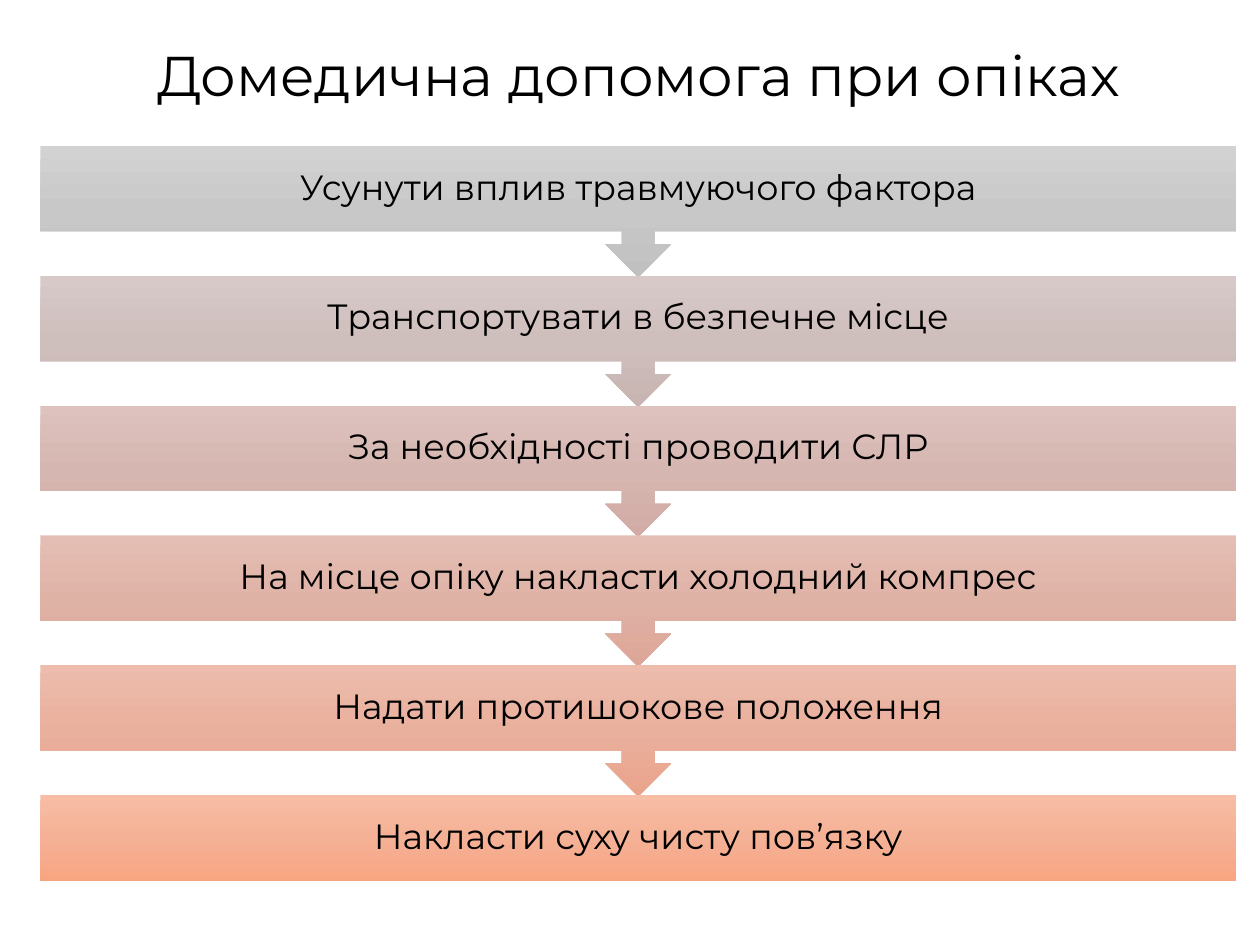
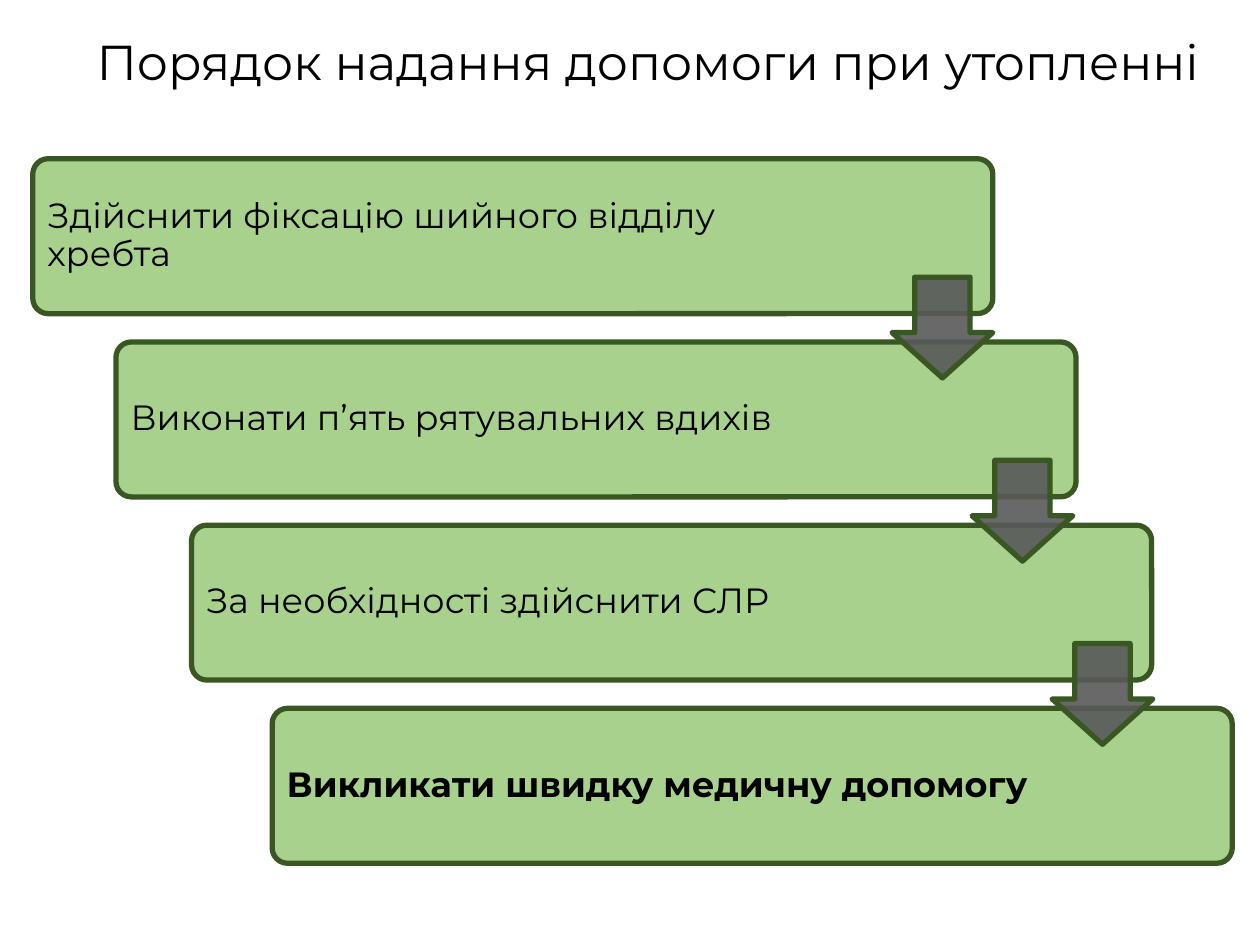
import copy
from dataclasses import dataclass

import pptx
import pptx.dml.color
import pptx.enum.shapes
import pptx.enum.text
import pptx.oxml.ns
import pptx.oxml.xmlchemy
import pptx.util
from lxml import etree

# Shared grid, font and colours
WIDTH, HEIGHT = pptx.util.Inches(10), pptx.util.Inches(7.5)
COLUMNS, ROWS = 100, 75
FONT = "Montserrat"
BODY_SIZE = 20
COLOURS = {
    "text": "000000",
    "step_fill": "A9D18E",
    "outline": "385723",
    "arrow_fill": "595959",
}
SHAPES = pptx.enum.shapes.MSO_SHAPE
ALIGN = pptx.enum.text.PP_ALIGN


@dataclass
class Area:
    """Place on the slide, in grid columns and rows."""
    column: float
    row: float
    columns: float
    rows: float

    def lengths(self) -> list[int]:
        column_width, row_height = WIDTH / COLUMNS, HEIGHT / ROWS
        return [round(self.column * column_width), round(self.row * row_height),
                round(self.columns * column_width), round(self.rows * row_height)]


@dataclass
class Insets:
    """Text margins in inches."""
    left: float
    top: float
    right: float
    bottom: float


@dataclass
class BurnStep:
    text: str
    gradient: tuple[str, str, str]


@dataclass
class DrowningStep:
    text: str
    column: float
    bold: bool = False


BURN_STEPS = [
    BurnStep("Усунути вплив травмуючого фактора", ("D2D2D2", "C8C8C8", "C0C0C0")),
    BurnStep("Транспортувати в безпечне місце", ("D7C9C8", "CEBEBC", "C8B4B2")),
    BurnStep("За необхідності проводити СЛР", ("DDC2BE", "D6B6B1", "D2ABA4")),
    BurnStep("На місце опіку накласти холодний компрес", ("E4BEB4", "DFB2A6", "DDA597")),
    BurnStep("Надати протишокове положення", ("EDBCAC", "E9B09D", "EAA38B")),
    BurnStep("Накласти суху чисту пов’язку", ("F7BDA5", "F5B196", "F8A582")),
]
DROWNING_STEPS = [
    DrowningStep("Здійснити фіксацію шийного відділу хребта", 2.6),
    DrowningStep("Виконати п’ять рятувальних вдихів", 9.2),
    DrowningStep("За необхідності здійснити СЛР", 15.2),
    DrowningStep("Викликати швидку медичну допомогу", 21.6, bold=True),
]


def rgb(hex_string: str) -> pptx.dml.color.RGBColor:
    return pptx.dml.color.RGBColor.from_string(hex_string)


def write(shape, text: str, size: float, align, bold: bool = False) -> None:
    para = shape.text_frame.paragraphs[0]
    para.text = text
    para.alignment = align
    for span in para.runs:
        span.font.name = FONT
        span.font.size = pptx.util.Pt(size)
        span.font.bold = bold
        span.font.color.rgb = rgb(COLOURS["text"])


def add_title(page, text: str, area: Area, size: float) -> None:
    box = page.shapes.add_textbox(*area.lengths())
    box.text_frame.word_wrap = False
    box.text_frame.auto_size = pptx.enum.text.MSO_AUTO_SIZE.SHAPE_TO_FIT_TEXT
    write(box, text, size, ALIGN.CENTER)


def add_plain_shape(page, kind, area: Area, adjustments: tuple[float, ...] = ()):
    shape = page.shapes.add_shape(kind, *area.lengths())
    shape.shadow.inherit = False
    for index, value in enumerate(adjustments):
        shape.adjustments[index] = value
    return shape


def write_step(shape, text: str, align, insets: Insets, bold: bool = False) -> None:
    frame = shape.text_frame
    frame.word_wrap = True
    frame.vertical_anchor = pptx.enum.text.MSO_ANCHOR.MIDDLE
    frame.margin_left = pptx.util.Inches(insets.left)
    frame.margin_top = pptx.util.Inches(insets.top)
    frame.margin_right = pptx.util.Inches(insets.right)
    frame.margin_bottom = pptx.util.Inches(insets.bottom)
    write(shape, text, BODY_SIZE, align, bold)
    frame.paragraphs[0].line_spacing = 0.9


def fill_gradient(shape, colours: tuple[str, str, str]) -> None:
    """Fill from top to bottom with three evenly spaced colours."""
    shape.fill.gradient()
    shape.fill.gradient_angle = 270
    stop_list = shape.element.spPr.find(".//" + pptx.oxml.ns.qn("a:gsLst"))
    stop_list.insert(1, copy.deepcopy(stop_list[0]))
    for index, stop in enumerate(shape.fill.gradient_stops):
        stop.color.rgb = rgb(colours[index])
        stop.position = index / (len(colours) - 1)


def fill_outlined(shape, colour: str) -> None:
    shape.fill.solid()
    shape.fill.fore_color.rgb = rgb(colour)
    shape.line.color.rgb = rgb(COLOURS["outline"])
    shape.line.width = pptx.util.Pt(3)


def set_opacity(shape, percent: int) -> None:
    colour = shape.element.spPr.find(
        pptx.oxml.ns.qn("a:solidFill") + "/" + pptx.oxml.ns.qn("a:srgbClr"))
    etree.SubElement(colour, pptx.oxml.ns.qn("a:alpha"), val=str(percent * 1000))


def build_burns(deck) -> None:
    page = deck.slides.add_slide(deck.slide_layouts[6])
    add_title(page, "Домедична допомога при опіках", Area(8.2, 2.7, 85, 6.4), 32)

    # Bands pointing down to the next one; the last has no arrow
    insets = Insets(0.16, 0.16, 0.16, 0.16)
    for index, step in enumerate(BURN_STEPS):
        is_last = index == len(BURN_STEPS) - 1
        kind = SHAPES.RECTANGLE if is_last else SHAPES.DOWN_ARROW_CALLOUT
        area = Area(3.2, 11.6 + 10.3 * index, 94.9, 6.8 if is_last else 10.4)
        band = add_plain_shape(page, kind, area)
        fill_gradient(band, step.gradient)
        band.line.fill.background()
        write_step(band, step.text, ALIGN.CENTER, insets)


def build_drowning(deck) -> None:
    page = deck.slides.add_slide(deck.slide_layouts[6])
    add_title(page, "Порядок надання допомоги при утопленні",
              Area(3.5, 2, 95.8, 5.7), 28)
    pitch = 14.54

    # Staircase of steps, with room for the arrows on the right
    insets = Insets(0.08, 0.08, 1.44, 0.08)
    for index, step in enumerate(DROWNING_STEPS):
        area = Area(step.column, 12.6 + pitch * index, 76.2, 12.3)
        card = add_plain_shape(page, SHAPES.ROUNDED_RECTANGLE, area, (0.1,))
        fill_outlined(card, COLOURS["step_fill"])
        write_step(card, step.text, ALIGN.LEFT, insets, step.bold)

    # Arrows across the gaps between steps
    for index in range(len(DROWNING_STEPS) - 1):
        area = Area(70.8 + 6.35 * index, 22 + pitch * index, 8, 8)
        arrow = add_plain_shape(page, SHAPES.DOWN_ARROW, area)
        # Head length first, then shaft width
        arrow.adjustments[0], arrow.adjustments[1] = 0.55, 0.45
        fill_outlined(arrow, COLOURS["arrow_fill"])
        set_opacity(arrow, 90)


def main() -> None:
    deck = pptx.Presentation()
    deck.slide_width, deck.slide_height = WIDTH, HEIGHT
    build_burns(deck)
    build_drowning(deck)
    deck.save("out.pptx")


if __name__ == "__main__":
    main()
